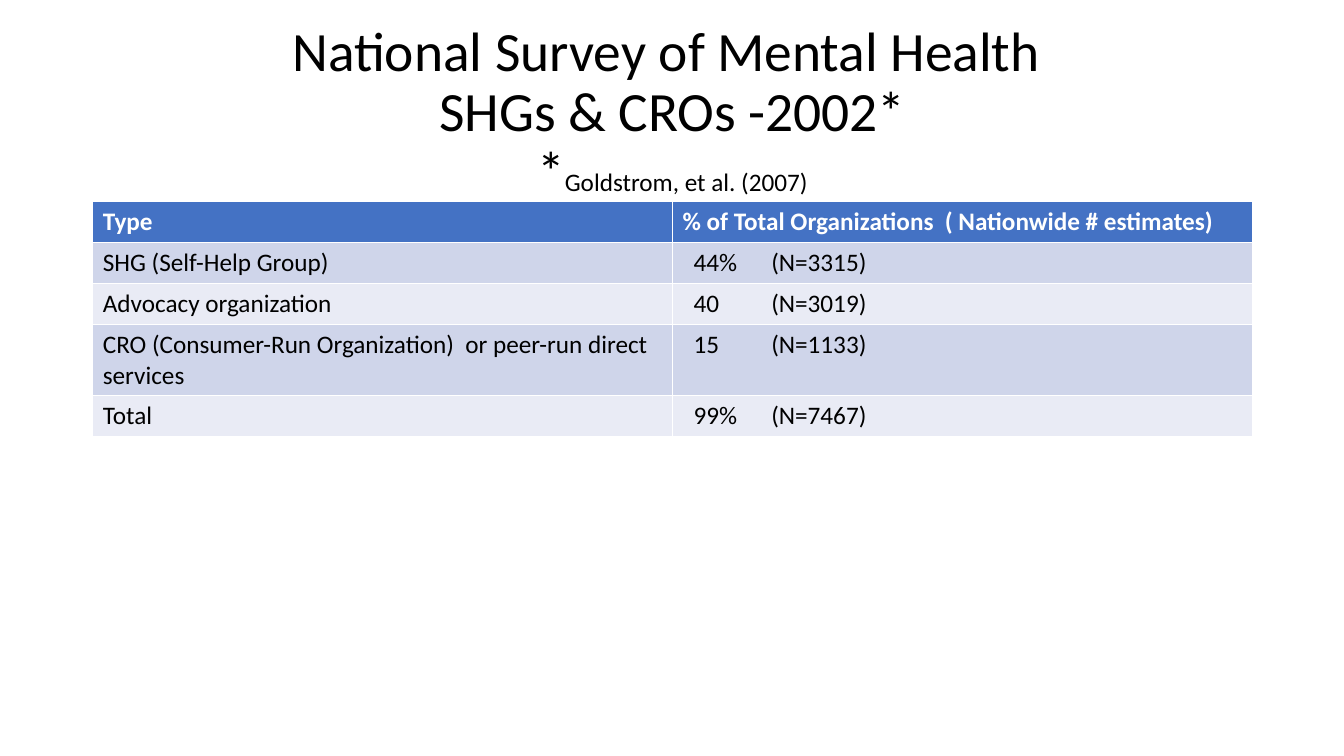
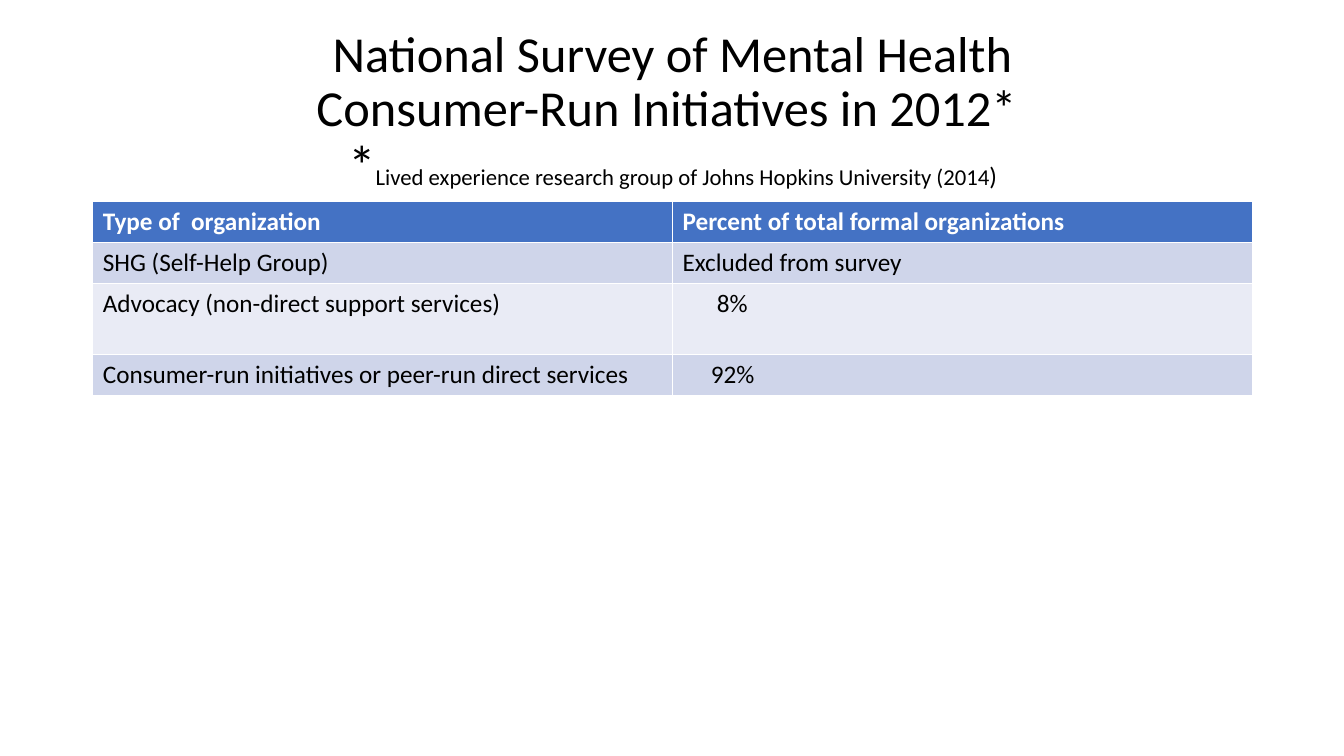
from dataclasses import dataclass

from pptx import Presentation
from pptx.dml.color import RGBColor
from pptx.enum.text import MSO_ANCHOR, MSO_AUTO_SIZE, PP_ALIGN
from pptx.oxml.ns import qn
from pptx.util import Inches, Pt
from lxml import etree

CENTER = PP_ALIGN.CENTER
MIDDLE = MSO_ANCHOR.MIDDLE
NO_AUTOFIT = MSO_AUTO_SIZE.NONE
TITLE_ONLY = 5


@dataclass(frozen=True)
class Theme:
    font: str = "Calibri"
    text: RGBColor = RGBColor(0x00, 0x00, 0x00)
    header_text: RGBColor = RGBColor(0xFF, 0xFF, 0xFF)
    header_fill: RGBColor = RGBColor(0x44, 0x72, 0xC4)
    band_fills: tuple = (RGBColor(0xCF, 0xD5, 0xEA), RGBColor(0xE9, 0xEB, 0xF5))
    large_title: float = 39.6
    title: float = 36
    body: float = 18
    citation: float = 16.2
    left: float = 0.92
    width: float = 11.5
    row_height: float = 0.4
    cell_margin: float = 0.1


@dataclass(frozen=True)
class Indented:
    """Cell text set in from the cell margin, with an optional tab stop."""
    text: str
    indent: float
    tab: float = 0


class Deck:
    def __init__(self, theme):
        self.theme = theme
        self.presentation = Presentation()
        self.presentation.slide_width = Inches(13.33)
        self.presentation.slide_height = Inches(7.5)
        self.slide = None

    def add_slide(self):
        layout = self.presentation.slide_layouts[TITLE_ONLY]
        self.slide = self.presentation.slides.add_slide(layout)

    def style_font(self, font, size, color, bold=False):
        font.name = self.theme.font
        font.size = Pt(size)
        font.color.rgb = color
        font.bold = bold

    def add_title(self, *lines):
        """Each line is a list of (text, size) runs."""
        theme = self.theme
        title = self.slide.shapes.title
        title.left, title.top = Inches(theme.left), Inches(0.4)
        title.width, title.height = Inches(theme.width), Inches(1.45)
        frame = title.text_frame
        frame.word_wrap = True
        frame.auto_size = NO_AUTOFIT
        frame.vertical_anchor = MIDDLE
        paragraph = frame.paragraphs[0]
        paragraph.alignment = CENTER
        paragraph.line_spacing = 0.9
        self.style_font(paragraph.font, lines[0][0][1], theme.text)
        for number, line in enumerate(lines):
            if number:
                paragraph.add_line_break()
            for text, size in line:
                run = paragraph.add_run()
                run.text = text
                run.font.size = Pt(size)

    def add_table(self, rows, tall_rows=None):
        """First row is the header; tall_rows maps row numbers to heights."""
        theme = self.theme
        columns = len(rows[0])
        heights = [theme.row_height] * len(rows)
        for number, height in (tall_rows or {}).items():
            heights[number] = height
        table = self.slide.shapes.add_table(
            len(rows), columns, Inches(theme.left), Inches(2),
            Inches(theme.width), Inches(sum(heights))).table
        for number, values in enumerate(rows):
            table.rows[number].height = Inches(heights[number])
            for column, value in enumerate(values):
                self.fill_cell(table.cell(number, column), value, number)

    def fill_cell(self, cell, value, row):
        theme = self.theme
        header = row == 0
        if not isinstance(value, Indented):
            value = Indented(value, 0)
        cell.fill.solid()
        cell.fill.fore_color.rgb = (
            theme.header_fill if header else theme.band_fills[(row - 1) % 2])
        cell.margin_left = Inches(theme.cell_margin + value.indent)
        paragraph = cell.text_frame.paragraphs[0]
        paragraph.text = value.text
        self.style_font(paragraph.font, theme.body,
                        theme.header_text if header else theme.text, header)
        if value.tab:
            tabs = etree.Element(qn("a:tabLst"))
            etree.SubElement(tabs, qn("a:tab"),
                             pos=str(Inches(value.tab)), algn="l")
            # The schema places tab stops ahead of the default run properties.
            paragraph.font._element.addprevious(tabs)


def share(percent, count):
    return Indented(f"{percent}\t(N={count})", 0.11, 0.77)


def main():
    theme = Theme()
    deck = Deck(theme)

    deck.add_slide()
    deck.add_title(
        [("National Survey of Mental Health ", theme.large_title)],
        [("SHGs & CROs -2002*", theme.large_title)],
        [("*", theme.large_title), ("Goldstrom, et al. (2007)", theme.body)])
    deck.add_table([
        ("Type", "% of Total Organizations  ( Nationwide # estimates)"),
        ("SHG (Self-Help Group)", share("44%", 3315)),
        ("Advocacy organization", share("40", 3019)),
        ("CRO (Consumer-Run Organization)  or peer-run direct services",
         share("15", 1133)),
        ("Total", share("99%", 7467))])

    deck.add_slide()
    deck.add_title(
        [("National Survey of Mental Health", theme.title)],
        [("Consumer-Run Initiatives in 2012* ", theme.title)],
        [("*", theme.large_title),
         ("Lived experience research group of Johns Hopkins University (2014",
          theme.citation),
         (")", theme.body)])
    deck.add_table([
        ("Type of  organization", "Percent of total formal organizations"),
        ("SHG (Self-Help Group)", "Excluded from survey"),
        ("Advocacy (non-direct support services)", Indented("8%", 0.34)),
        ("Consumer-run initiatives or peer-run direct services",
         Indented("92%", 0.28))], tall_rows={2: 0.71})

    deck.presentation.save("out.pptx")


if __name__ == "__main__":
    main()
